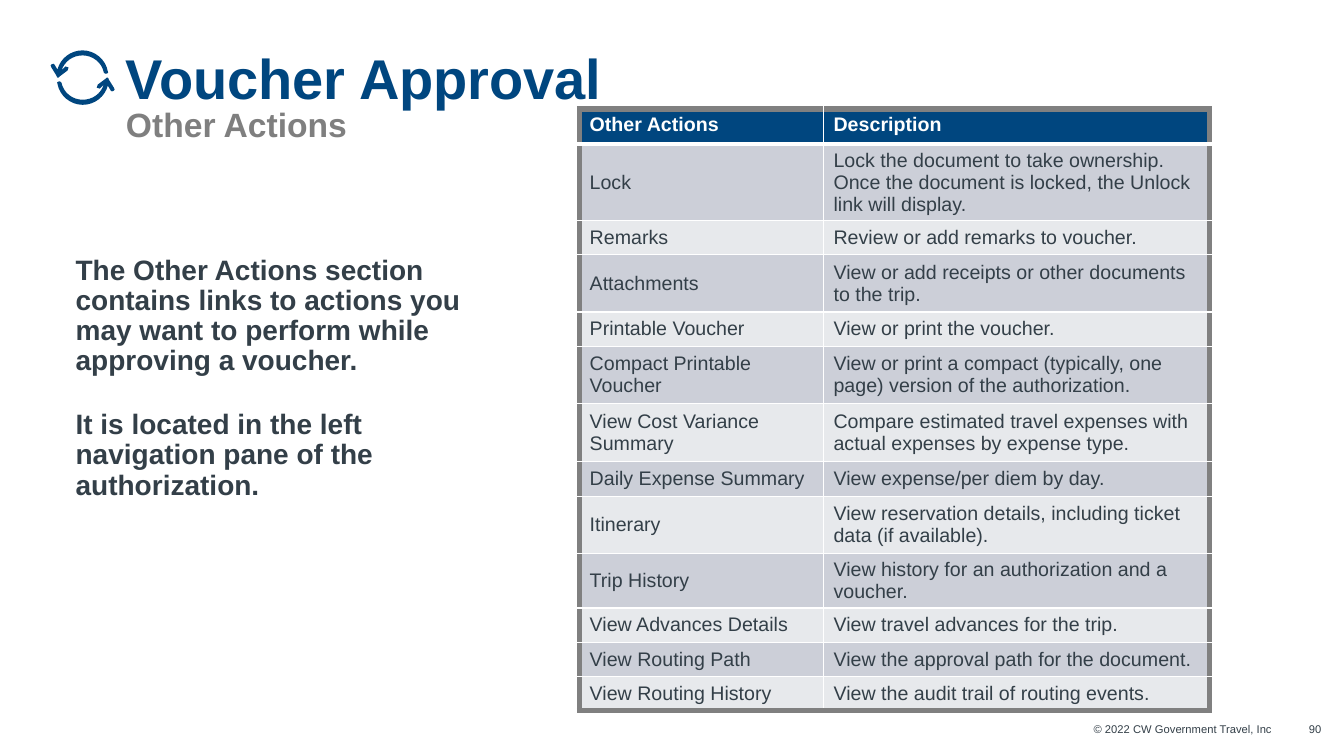
from lxml.etree import SubElement
from pptx import Presentation
from pptx.dml.color import RGBColor
from pptx.enum.text import MSO_ANCHOR as Anchor, MSO_AUTO_SIZE as AutoSize, PP_ALIGN as Align
from pptx.oxml.ns import qn
from pptx.util import Pt

PX = 9144  # EMU per px, 100 px to the inch
FONT = "Arial"
NAVY = RGBColor(0x00, 0x46, 0x7F)
GRAY = RGBColor(0x7F, 0x7F, 0x7F)
FRAME = RGBColor(0x80, 0x80, 0x80)
SLATE = RGBColor(0x33, 0x3F, 0x48)
WHITE = RGBColor(0xFF, 0xFF, 0xFF)
BANDS = (RGBColor(0xE7, 0xE9, 0xEC), RGBColor(0xCC, 0xCF, 0xD8))

# Arrow outline: one point is a straight segment, three are a Bézier curve
ARROW_START = (57, 77)
ARROW = [
    [(58, 77), (58, 77), (58, 77)], [(58, 77), (59, 76), (59, 76)],
    [(67, 70)], [(68, 69), (68, 68), (68, 67)], [(67, 66), (66, 66), (65, 66)],
    [(61, 70)], [(64, 61), (72, 55), (82, 55)], [(92, 55), (101, 62), (103, 72)],
    [(104, 73), (105, 74), (106, 73)], [(107, 73), (108, 72), (107, 71)],
    [(105, 59), (94, 50), (82, 50)], [(70, 50), (60, 58), (57, 69)],
    [(54, 64)], [(54, 63), (52, 63), (51, 64)], [(50, 64), (50, 66), (51, 67)],
    [(56, 75)], [(56, 76), (57, 77), (57, 77)],
]
CENTER_X, CENTER_Y = 82, 77

ACTIONS = [  # action, description, row height
    ("Other Actions", "Description", 35),
    ("Lock", "Lock the document to take ownership.  Once the document is locked, "
             "the Unlock link will display.", 75),
    ("Remarks", "Review or add remarks to voucher.", 34),
    ("Attachments", "View or add receipts or other documents to the trip.", 57),
    ("Printable Voucher", "View or print the voucher.", 34),
    ("Compact Printable Voucher",
     "View or print a compact (typically, one page) version of the authorization.", 57),
    ("View Cost Variance Summary",
     "Compare estimated travel expenses with actual expenses by expense type.", 57),
    ("Daily Expense Summary", "View expense/per diem by day.", 35),
    ("Itinerary", "View reservation details, including ticket data (if available).", 57),
    ("Trip History", "View history for an authorization and a voucher.", 53),
    ("View Advances Details", "View travel advances for the trip.", 34),
    ("View Routing Path", "View the approval path for the document.", 34),
    ("View Routing History", "View the audit trail of routing events.", 34),
]


def place(shape, left, top, width, height, anchor=Anchor.TOP):
    """Position a text shape and clear its insets."""
    shape.left, shape.top = left * PX, top * PX
    shape.width, shape.height = width * PX, height * PX
    frame = shape.text_frame
    frame.margin_left = frame.margin_right = frame.margin_top = frame.margin_bottom = 0
    frame.word_wrap = True
    frame.auto_size = AutoSize.NONE
    frame.vertical_anchor = anchor
    return frame


def style(font, size, color, bold=False):
    font.name, font.size, font.bold = FONT, Pt(size), bold
    font.color.rgb = color


prs = Presentation()
prs.slide_width, prs.slide_height = 4000 * PX // 3, 750 * PX
slide = prs.slides.add_slide(prs.slide_layouts[1])
shapes = slide.shapes

# Cycle icon: one arrow, then the same arrow turned half a turn
for turn in (1, -1):
    points = [(CENTER_X + turn * (x - CENTER_X), CENTER_Y + turn * (y - CENTER_Y))
              for x, y in [ARROW_START] + sum(ARROW, [])]
    outline = shapes.build_freeform(*points[0], scale=PX)
    outline.add_line_segments(points[1:], close=True)
    cycle_arrow = outline.convert_to_shape()
    lines = iter(list(cycle_arrow._element.iter(qn("a:lnTo"))))
    for segment in ARROW:
        first, *others = [next(lines) for _ in segment]
        if others:
            first.tag = qn("a:cubicBezTo")
            for line in others:
                first.append(line[0])
                line.getparent().remove(line)
    cycle_arrow.shadow.inherit = False
    cycle_arrow.fill.solid()
    cycle_arrow.fill.fore_color.rgb = NAVY
    cycle_arrow.line.fill.background()

# Title and subtitle
heading = place(shapes.title, 125, 53, 1153, 92).paragraphs[0]
heading.alignment = Align.LEFT
heading.line_spacing = 0.85
title_run = heading.add_run()
title_run.text = "Voucher Approval"
style(title_run.font, 40, NAVY, True)
heading.add_line_break()
subtitle_run = heading.add_run()
subtitle_run.text = "Other Actions"
style(subtitle_run.font, 24, GRAY, True)

# Introduction
intro = place(slide.placeholders[1], 75, 216, 412, 319, Anchor.MIDDLE)
intro.text = ("The Other Actions section contains links to actions you may want to perform "
              "while approving a voucher.\n"
              "It is located in the left navigation pane of the authorization.")
for index, paragraph in enumerate(intro.paragraphs):
    props = paragraph._p.get_or_add_pPr()
    props.set("marL", "0")
    props.set("indent", "0")
    SubElement(props, qn("a:buNone"))
    paragraph.line_spacing = 0.9
    paragraph.space_before = Pt(12 * index)
    paragraph.space_after = Pt(12 * (1 - index))
    style(paragraph.font, 20, SLATE, True)

# Table of actions
total_height = sum(height for _, _, height in ACTIONS)
table = shapes.add_table(len(ACTIONS), 2, 575 * PX, 108 * PX, 625 * PX, total_height * PX).table
table.first_row = True
table.horz_banding = False
for column, width in zip(table.columns, (242, 383)):
    column.width = width * PX

last = len(ACTIONS) - 1
for row, (action, description, height) in enumerate(ACTIONS):
    table.rows[row].height = height * PX
    is_header = row == 0
    for col, text in enumerate((action, description)):
        cell = table.cell(row, col)
        cell.text = text
        cell.vertical_anchor = Anchor.TOP if is_header else Anchor.MIDDLE
        style(cell.text_frame.paragraphs[0].font, 14, WHITE if is_header else SLATE, is_header)
        on_frame = {"L": col == 0, "R": col == 1, "T": is_header, "B": row == last}
        for side, framed in on_frame.items():
            weight = 4.5 if framed else 3 if is_header and side == "B" else 1
            border = SubElement(cell._tc.get_or_add_tcPr(), qn(f"a:ln{side}"), w=str(Pt(weight)))
            border_fill = SubElement(border, qn("a:solidFill"))
            SubElement(border_fill, qn("a:srgbClr"), val=str(FRAME if framed else WHITE))
        cell.fill.solid()
        cell.fill.fore_color.rgb = NAVY if is_header else BANDS[row % 2]

# Footer
for text, left, width in (("© 2022 CW Government Travel, Inc", 838, 424), ("90", 1288, 23)):
    footer = place(shapes.add_textbox(0, 0, 0, 0), left, 717, width, 14)
    footer.text = text
    footer.paragraphs[0].alignment = Align.RIGHT
    style(footer.paragraphs[0].font, 8, SLATE)

prs.save("out.pptx")
